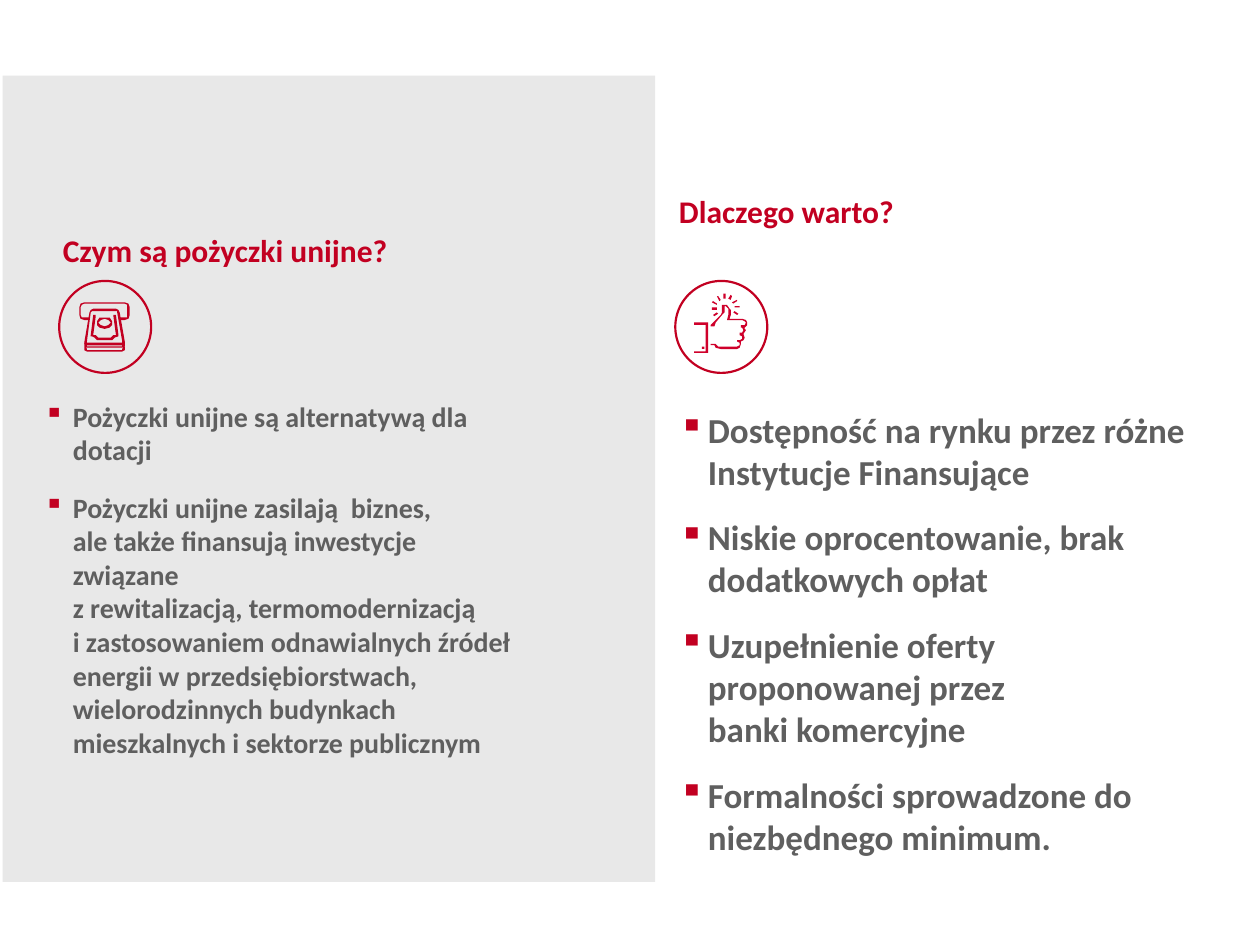
from copy import deepcopy

from lxml import etree
from pptx import Presentation
from pptx.dml.color import RGBColor
from pptx.enum.shapes import MSO_SHAPE
from pptx.enum.text import MSO_ANCHOR, MSO_AUTO_SIZE
from pptx.oxml.ns import qn
from pptx.util import Inches, Pt

RECTANGLE, OVAL = MSO_SHAPE.RECTANGLE, MSO_SHAPE.OVAL
TOP, BOTTOM = MSO_ANCHOR.TOP, MSO_ANCHOR.BOTTOM
NO_FIT, GROW = MSO_AUTO_SIZE.NONE, MSO_AUTO_SIZE.SHAPE_TO_FIT_TEXT

SLIDE_WIDTH, SLIDE_HEIGHT = Inches(10), Inches(7.5)
GRID_COLUMNS = 1000
CELL = SLIDE_WIDTH // GRID_COLUMNS
RED, THUMB_RED, GREY, PANEL_GREY = "C20021", "CF002B", "5F5F5F", "E8E8E8"
BADGE_SIZE, BADGE_ROW = 73, 223
BULLET_INDENT = 23

LOAN_FACTS = [
    "Pożyczki unijne są alternatywą dla dotacji",
    "Pożyczki unijne zasilają  biznes,\vale także finansują inwestycje związane\v"
    "z rewitalizacją, termomodernizacją\vi zastosowaniem odnawialnych źródeł energii "
    "w przedsiębiorstwach, wielorodzinnych budynkach mieszkalnych i sektorze publicznym",
]
BENEFITS = [
    "Dostępność na rynku przez różne Instytucje Finansujące",
    "Niskie oprocentowanie, brak dodatkowych opłat",
    "Uzupełnienie oferty proponowanej przez\vbanki komercyjne",
    "Formalności sprowadzone do niezbędnego minimum.",
]

TRAY = [
    [(50, 51), (22, 51), (20, 50), (20, 48), (24, 25), (25, 23), (27, 22),
     (45, 22), (47, 23), (48, 25), (52, 48), (52, 50)],
    [(27, 24), (26, 24), (25, 25), (22, 48), (22, 49), (50, 49), (50, 48),
     (46, 25), (46, 24), (45, 24)],
]
BANKNOTE = [
    [(42, 47), (30, 47), (28, 45), (26, 44), (25, 44), (25, 43), (27, 27),
     (29, 27), (29, 28), (27, 43), (29, 43), (31, 45), (41, 45), (43, 43),
     (45, 43), (43, 28), (43, 27), (45, 27), (47, 43), (47, 44), (44, 45)],
]
COIN = [
    [(36, 38), (32, 37), (30, 35), (30, 32), (32, 29), (36, 29), (40, 29),
     (42, 32), (42, 35), (40, 37)],
    [(36, 30), (33, 31), (31, 33), (33, 35), (36, 36), (39, 35), (41, 33), (39, 31)],
]
SLOT = [
    [(20, 17), (17, 18), (16, 21), (16, 27), (17, 30), (20, 31), (24, 31),
     (24, 29), (20, 29), (18, 29), (17, 27), (17, 21), (18, 19), (20, 18),
     (52, 18), (54, 19), (54, 21), (54, 27), (54, 29), (52, 29), (48, 29),
     (48, 31), (52, 31), (55, 30), (56, 27), (56, 21), (55, 18), (52, 17)],
]
NOTE_EDGE = [(52, 49), (51, 49), (50, 51), (50, 52), (22, 52), (22, 51),
             (21, 49), (20, 49), (20, 52), (22, 53), (50, 53), (52, 52)]
NOTE_STACK = [[[(x, y + drop) for x, y in NOTE_EDGE]] for drop in (0, 3)]
CASH = [TRAY, BANKNOTE, COIN, SLOT, *NOTE_STACK]

HAND = [
    [(38, 19), (41, 19), (43, 22), (44, 23), (44, 27), (43, 30), (53, 30),
     (56, 31), (57, 33), (57, 35), (55, 37), (55, 38), (56, 39), (54, 42),
     (55, 45), (54, 47), (52, 48), (52, 50), (51, 53), (49, 54), (47, 54),
     (36, 54), (32, 53), (31, 51), (28, 51), (28, 50), (32, 50), (34, 52),
     (36, 52), (49, 52), (51, 51), (51, 49), (49, 48), (49, 47), (51, 47),
     (53, 46), (53, 44), (51, 43), (51, 41), (53, 41), (54, 39), (53, 37),
     (52, 37), (52, 35), (55, 35), (56, 33), (55, 32), (53, 31), (41, 31),
     (42, 27), (42, 22), (40, 20), (39, 20), (39, 25), (37, 27), (32, 33),
     (31, 36), (28, 36), (28, 35), (30, 33), (31, 32), (36, 27), (37, 25),
     (37, 19)],
]
CUFF = [[(15, 33), (26, 33), (26, 57), (15, 57), (15, 56), (24, 56), (24, 35), (15, 35)]]
SLANTED_RAYS = [
    [[(34, 12), (36, 15), (35, 16), (33, 12)]],
    [[(30, 16), (33, 18), (33, 19), (29, 17)]],
    [[(33, 25), (34, 26), (31, 28), (30, 27)]],
    [[(47, 24), (50, 26), (49, 27), (46, 25)]],
    [[(49, 15), (49, 16), (46, 18), (45, 17)]],
    [[(44, 11), (45, 12), (44, 15), (42, 14)]],
]
STRAIGHT_RAYS = [(38, 10, 2, 4), (29, 21, 4, 2), (47, 20, 4, 1)]
CUFF_BUTTON = (21, 52, 2, 2)
THUMB = [*SLANTED_RAYS, HAND, CUFF]


def colour(hex_code):
    return RGBColor.from_string(hex_code)


def cells(*counts):
    return [count * CELL for count in counts]


def paint(shape, fill=None, line=None):
    shape.shadow.inherit = False
    if fill:
        shape.fill.solid()
        shape.fill.fore_color.rgb = colour(fill)
    else:
        shape.fill.background()
    if line:
        shape.line.color.rgb = colour(line)
        shape.line.width = Pt(1.25)
    else:
        shape.line.fill.background()


def add_block(shapes, kind, box, **look):
    paint(shapes.add_shape(kind, *cells(*box)), **look)


def add_outline(shapes, contours, column, fill):
    first, *holes = contours
    builder = shapes.build_freeform(*first[0], scale=CELL)
    builder.add_line_segments(first[1:], close=True)
    for hole in holes:
        builder.move_to(*hole[0])
        builder.add_line_segments(hole[1:], close=True)
    paint(builder.convert_to_shape(*cells(column, BADGE_ROW)), fill=fill)


def add_badge(slide, column, outlines, bars, fill):
    badge = slide.shapes.add_group_shape().shapes
    for contours in outlines:
        add_outline(badge, contours, column, fill)
    for x, y, width, height in bars:
        add_block(badge, RECTANGLE, (column + x, BADGE_ROW + y, width, height), fill=fill)
    add_block(badge, OVAL, (column, BADGE_ROW, BADGE_SIZE, BADGE_SIZE), line=RED)


def add_bullet(paragraph):
    properties = paragraph._p.get_or_add_pPr()
    indent = BULLET_INDENT * CELL
    properties.set("marL", str(indent))
    properties.set("indent", str(-indent))
    bullet_colour = etree.SubElement(properties, qn("a:buClr"))
    etree.SubElement(bullet_colour, qn("a:srgbClr"), val=RED)
    etree.SubElement(properties, qn("a:buChar"), char="▪")


def add_text(slide, box, lines, size, ink, bulleted=False, **frame_format):
    frame = slide.shapes.add_textbox(*cells(*box)).text_frame
    for name, value in {"word_wrap": True, **frame_format}.items():
        setattr(frame, name, value)
    font_format = {"name": "Calibri", "size": Pt(size), "bold": True}
    for index, line in enumerate(lines):
        paragraph = frame.add_paragraph() if index else frame.paragraphs[0]
        paragraph.text = line
        if bulleted:
            add_bullet(paragraph)
        if index:
            paragraph.space_before = Pt(13.5)
        for run in paragraph.runs:
            for name, value in font_format.items():
                setattr(run.font, name, value)
            run.font.color.rgb = colour(ink)
        for line_break in paragraph._p.findall(qn("a:br")):
            line_break.append(deepcopy(paragraph.runs[0]._r.rPr))


def add_heading(slide, box, heading):
    add_text(slide, box, [heading], 18, RED, vertical_anchor=BOTTOM, auto_size=GROW)


def add_bullets(slide, box, lines, size):
    add_text(slide, box, lines, size, GREY, bulleted=True,
             vertical_anchor=TOP, auto_size=NO_FIT)


def main():
    deck = Presentation()
    deck.slide_width, deck.slide_height = SLIDE_WIDTH, SLIDE_HEIGHT
    slide = deck.slides.add_slide(deck.slide_layouts[6])

    add_block(slide.shapes, RECTANGLE, (2, 60, 518, 640), fill=PANEL_GREY)
    add_heading(slide, (40, 178, 371, 40), "Czym są pożyczki unijne?")
    add_bullets(slide, (25, 312, 399, 248), LOAN_FACTS, 16)
    add_heading(slide, (529, 147, 371, 40), "Dlaczego warto?")
    add_bullets(slide, (529, 319, 432, 212), BENEFITS, 20)
    add_badge(slide, 47, CASH, [], RED)
    add_badge(slide, 536, THUMB, [*STRAIGHT_RAYS, CUFF_BUTTON], THUMB_RED)

    deck.save("out.pptx")


if __name__ == "__main__":
    main()
